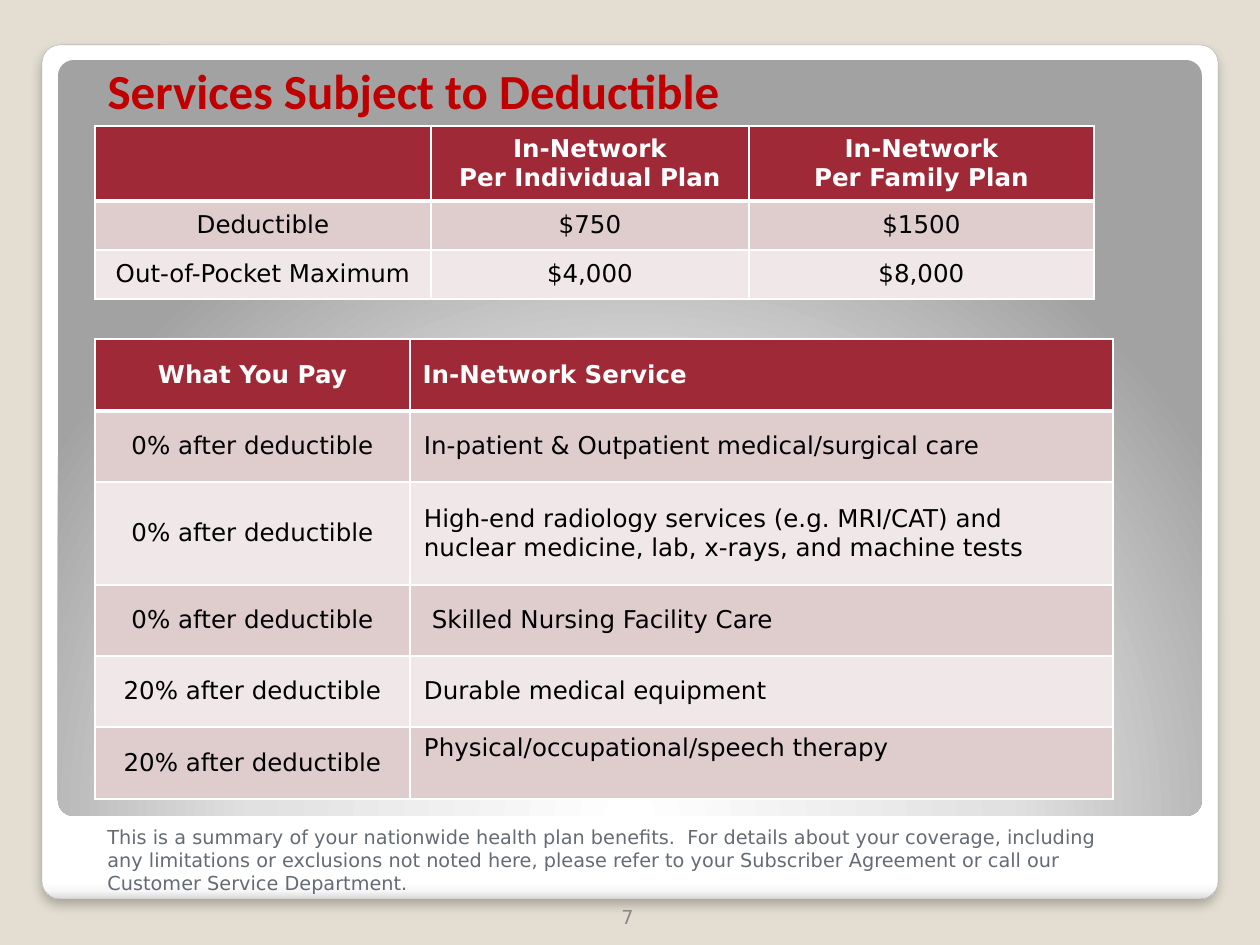
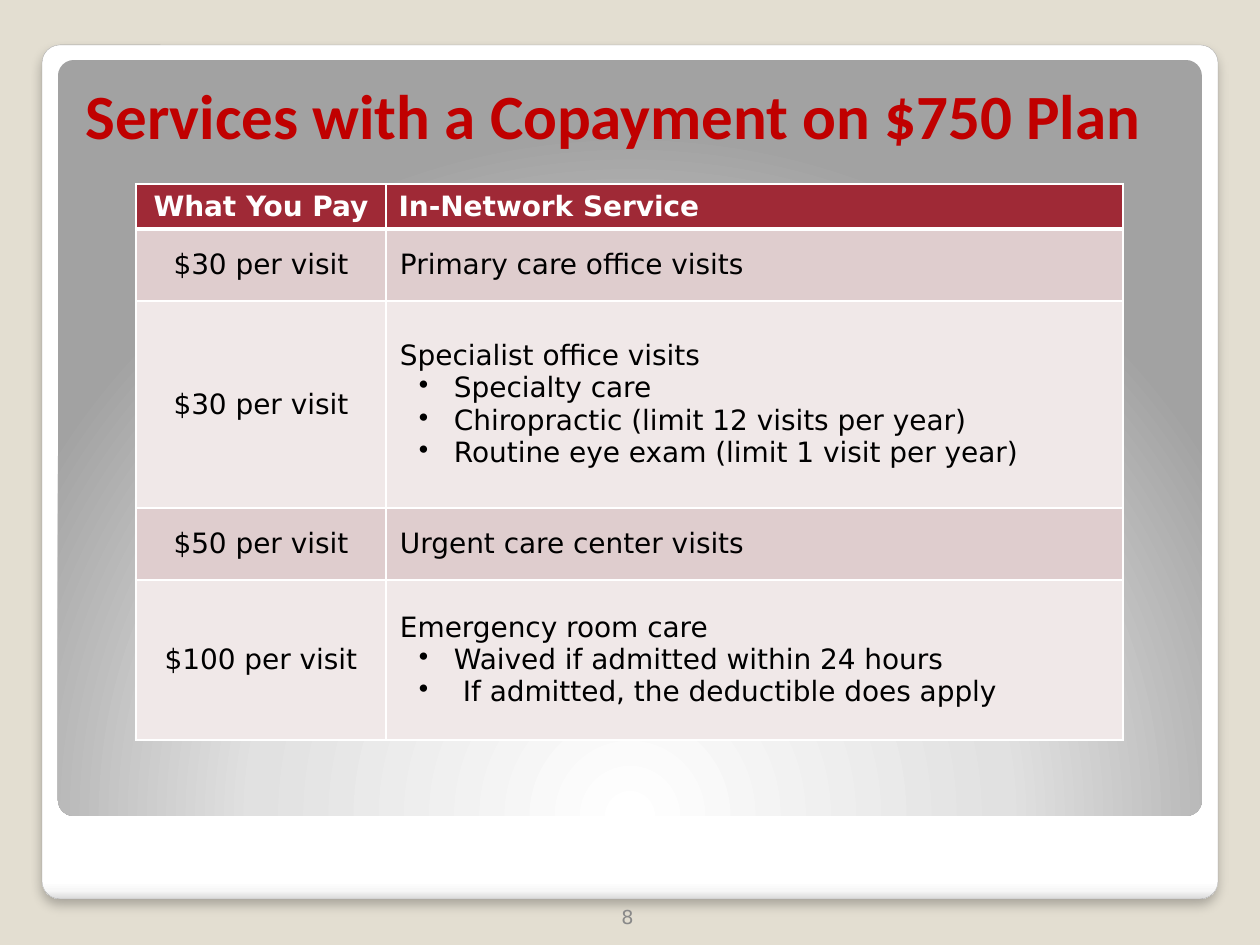
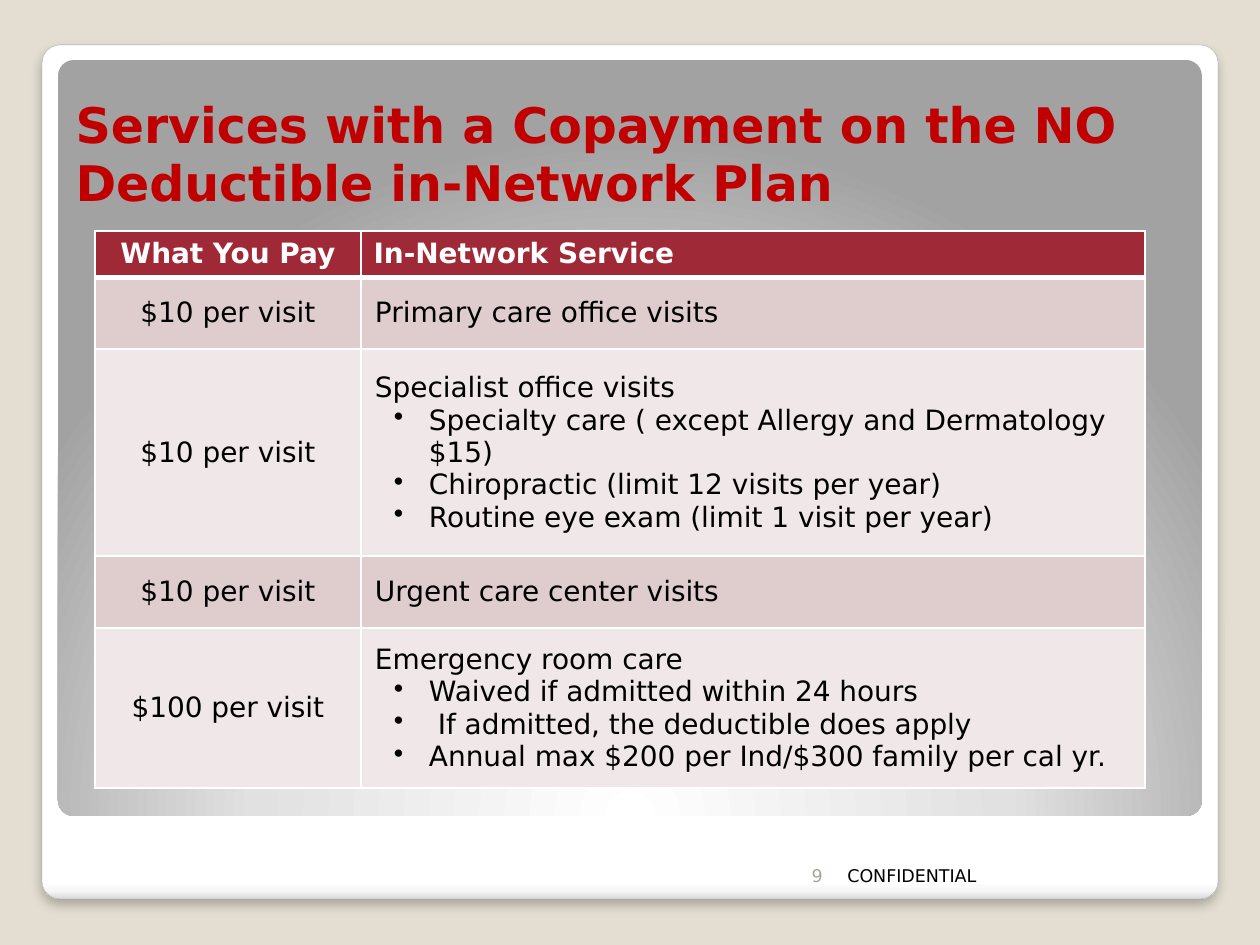
from pptx import Presentation
from pptx.dml.color import RGBColor
from pptx.enum.shapes import MSO_SHAPE as Preset
from pptx.enum.text import MSO_ANCHOR as Anchor, MSO_AUTO_SIZE as AutoSize, PP_ALIGN as Align
from pptx.oxml import parse_xml
from pptx.oxml.ns import nsdecls, qn
from pptx.util import Emu, Pt

PX = 914400 / 126
SANS, HEADING = "DejaVu Sans", "Calibri"
SAND, RED, MAROON = "E3DED1", "C00000", "9F2936"
ROSE, PALE, WHITE, BLACK = "DFCDCE", "F0E8E8", "FFFFFF", "000000"
GRAY, SLATE, TAUPE, EDGE = "898989", "636B73", "A8A49B", "A4A4A4"

CARD_STOPS = [(0, WHITE), (98, WHITE), (99, "F7F7F7"), (100, "DADADA")]
PANEL_STOPS = [(0, WHITE), (55, "E1E1E1"), (100, "A2A2A2")]
LINEAR = '<a:lin ang="5400000" scaled="0"/>'
RADIAL = ('<a:path path="circle"><a:fillToRect l="50000" t="175000" '
          'r="50000" b="-75000"/></a:path>')
COPAY_ROWS = [45, 72, 207, 72, 160]
COPAY_HEADER = ["What You Pay", "In-Network Service"]
CHIROPRACTIC = "• Chiropractic (limit 12 visits per year)"
EYE_EXAM = "• Routine eye exam (limit 1 visit per year)"
EMERGENCY = ["Emergency room care", "• Waived if admitted within 24 hours",
             "•  If admitted, the deductible does apply"]


def px(length):
    return Emu(round(length * PX))


def color(value):
    return RGBColor.from_string(value)


def place(box):
    return [px(length) for length in box]


def add_span(para, text, size, ink, font=SANS, bold=False):
    span = para.add_run()
    span.text = text
    span.font.name = font
    span.font.size = Pt(size)
    span.font.bold = bold
    span.font.color.rgb = color(ink)


def add_note(page, box, text, size, ink, align=Align.LEFT, anchor=Anchor.BOTTOM):
    frame = page.shapes.add_textbox(*place(box)).text_frame
    frame.word_wrap = True
    frame.vertical_anchor = anchor
    para = frame.paragraphs[0]
    para.alignment = align
    add_span(para, text, size, ink)
    return para


def add_panel(page, box, stops, direction):
    panel = page.shapes.add_shape(Preset.ROUNDED_RECTANGLE, *place(box))
    panel.adjustments[0] = 0.021
    panel.shadow.inherit = False
    panel.line.fill.background()
    marks = "".join(f'<a:gs pos="{spot * 1000}"><a:srgbClr val="{tint}"/></a:gs>'
                    for spot, tint in stops)
    panel.element.spPr.find(qn("a:prstGeom")).addnext(parse_xml(
        f'<a:gradFill {nsdecls("a")} rotWithShape="1"><a:gsLst>{marks}</a:gsLst>'
        f'{direction}</a:gradFill>'))
    return panel


def set_backdrop(deck, page):
    fill = deck.slide_master.background.fill
    fill.solid()
    fill.fore_color.rgb = color(SAND)
    card = add_panel(page, (42, 45, 1176, 854), CARD_STOPS, LINEAR)
    card.line.color.rgb = color(EDGE)
    card.line.width = Pt(0.16)
    card.element.spPr.find(qn("a:effectLst")).append(parse_xml(
        f'<a:outerShdw {nsdecls("a")} blurRad="{Pt(6)}" dist="{Pt(4)}" dir="5400000" '
        f'rotWithShape="0"><a:srgbClr val="{BLACK}"><a:alpha val="25000"/>'
        '</a:srgbClr></a:outerShdw>'))
    panel = add_panel(page, (58, 60, 1144, 756), PANEL_STOPS, RADIAL)
    tree = page.slide_layout.shapes.element
    for index, shape in enumerate((card, panel)):
        shape.element.nvSpPr.cNvPr.id = 101 + index
        tree.insert(2 + index, shape.element)


def set_title(page, box, text, size, font=HEADING):
    title = page.shapes.title
    title.left, title.top, title.width, title.height = place(box)
    frame = title.text_frame
    frame.auto_size = AutoSize.NONE
    frame.word_wrap = True
    frame.vertical_anchor = Anchor.BOTTOM
    para = frame.paragraphs[0]
    para.alignment = Align.LEFT
    add_span(para, text, size, RED, font, True)


def set_bullet(para):
    props = para._p.get_or_add_pPr()
    props.set("marL", str(px(54)))
    props.set("indent", str(-px(35)))
    props.append(parse_xml(f'<a:buChar {nsdecls("a")} char="•"/>'))


def set_borders(cell, row):
    widths = {"lnL": 1, "lnR": 1, "lnT": 3 if row == 1 else 1, "lnB": 3 if row == 0 else 1}
    props = cell._tc.get_or_add_tcPr()
    for side, width in widths.items():
        props.append(parse_xml(
            f'<a:{side} {nsdecls("a")} w="{Pt(width)}"><a:solidFill>'
            f'<a:srgbClr val="{WHITE}"/></a:solidFill></a:{side}>'))


def fill_cell(cell, row, column, lines, size, align):
    set_borders(cell, row)
    cell.fill.solid()
    cell.fill.fore_color.rgb = color(MAROON if row == 0 else ROSE if row % 2 else PALE)
    cell.vertical_anchor = Anchor.MIDDLE
    if row and column:
        cell.margin_left = cell.margin_right = px(14)
    frame = cell.text_frame
    for index, line in enumerate(lines):
        para = frame.add_paragraph() if index else frame.paragraphs[0]
        para.alignment = align
        if line.startswith("• "):
            set_bullet(para)
        add_span(para, line.removeprefix("• "), size, BLACK if row else WHITE, bold=row == 0)


def add_benefit_table(page, left, top, widths, heights, rows, size, aligns):
    box = (left, top, sum(widths), sum(heights))
    table = page.shapes.add_table(len(heights), len(widths), *place(box)).table
    for column, width in zip(table.columns, widths):
        column.width = px(width)
    for line, height in zip(table.rows, heights):
        line.height = px(height)
    for row, entries in enumerate(rows):
        for column, entry in enumerate(entries):
            lines = [entry] if isinstance(entry, str) else entry
            fill_cell(table.cell(row, column), row, column, lines, size, aligns[column])
    return table


def add_copay_table(page, left, top, widths, fees, specialist, emergency):
    services = ["Primary care office visits", ["Specialist office visits", *specialist],
                "Urgent care center visits", emergency]
    rows = [COPAY_HEADER] + [[f"{fee} per visit", service]
                             for fee, service in zip(fees, services)]
    add_benefit_table(page, left, top, widths, COPAY_ROWS, rows, 16,
                      [Align.CENTER, Align.LEFT])


def add_page_number(page, number):
    add_note(page, (609, 885, 72, 50), number, 11, GRAY)


def build_deductible(page):
    set_title(page, (95, 32, 1155, 94), "Services Subject to Deductible", 28)
    add_page_number(page, "7")
    free, shared = "0% after deductible", "20% after deductible"
    services = add_benefit_table(page, 95, 339, [315, 703], [72, 71, 103, 71, 71, 72], [
        COPAY_HEADER,
        [free, "In-patient & Outpatient medical/surgical care"],
        [free, "High-end radiology services (e.g. MRI/CAT) and nuclear medicine, "
               "lab, x-rays, and machine tests"],
        [free, " Skilled Nursing Facility Care"],
        [shared, "Durable medical equipment"],
        [shared, "Physical/occupational/speech therapy"],
    ], 14, [Align.CENTER, Align.LEFT])
    services.cell(5, 1).vertical_anchor = Anchor.TOP
    add_benefit_table(page, 95, 126, [336, 318, 345], [75, 49, 49], [
        [[], ["In-Network", "Per Individual Plan"], ["In-Network", "Per Family Plan"]],
        ["Deductible", "$750", "$1500"],
        ["Out-of-Pocket Maximum", "$4,000", "$8,000"],
    ], 14, [Align.CENTER] * 3)
    para = add_note(
        page, (95, 819, 1040, 126),
        "This is a summary of your nationwide health plan benefits.  For details about "
        "your coverage, including any limitations or exclusions not noted here, please refer "
        "to your Subscriber Agreement or call our Customer Service Department.",
        11, SLATE, anchor=Anchor.TOP)
    para.space_before, para.space_after = Pt(6), Pt(3)


def build_copay(page):
    set_title(page, (73, 63, 1155, 95), "Services with a Copayment on $750 Plan", 36)
    add_copay_table(page, 136, 184, [250, 737], ["$30", "$30", "$50", "$100"],
                    ["• Specialty care", CHIROPRACTIC, EYE_EXAM], EMERGENCY)
    add_page_number(page, "8")


def build_no_deductible(page):
    set_title(page, (63, 73, 1128, 145),
              "Services with a Copayment on the NO Deductible in-Network Plan", 28, SANS)
    add_note(page, (520, 842, 315, 50), "9", 10, TAUPE, Align.RIGHT)
    add_note(page, (835, 842, 315, 50), "CONFIDENTIAL", 10, BLACK)
    add_copay_table(page, 95, 231, [266, 784], ["$10", "$10", "$10", "$100"],
                    ["• Specialty care ( except Allergy and Dermatology $15)",
                     CHIROPRACTIC, EYE_EXAM],
                    EMERGENCY + ["• Annual max $200 per Ind/$300 family per cal yr."])


def main():
    deck = Presentation()
    deck.slide_width, deck.slide_height = px(1260), px(945)
    builders = [build_deductible, build_copay, build_no_deductible]
    pages = [deck.slides.add_slide(deck.slide_layouts[5]) for _ in builders]
    set_backdrop(deck, pages[0])
    for build, page in zip(builders, pages):
        build(page)
    deck.save("out.pptx")


if __name__ == "__main__":
    main()
